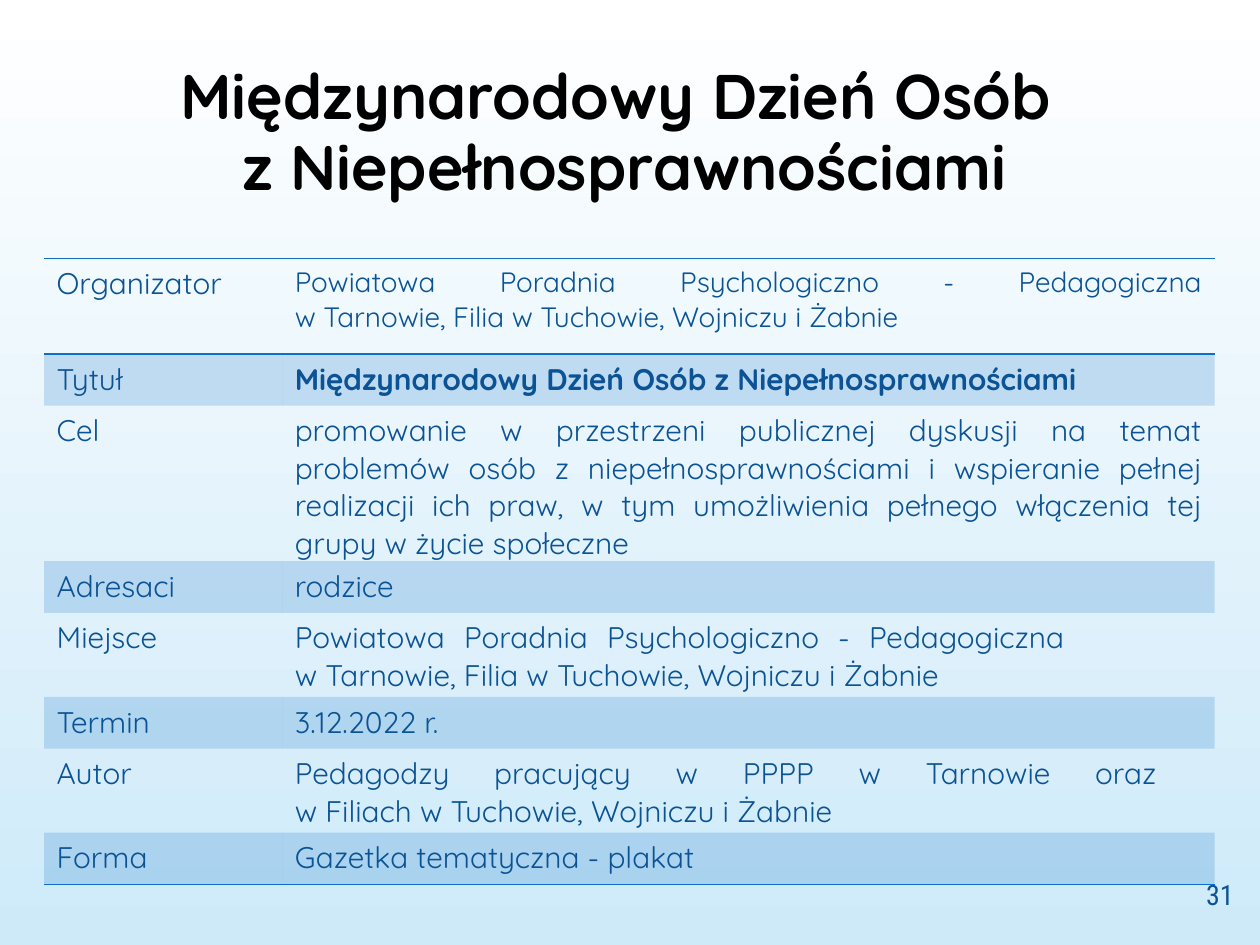
"""Build the event card slide for the International Day of Persons with Disabilities."""
from dataclasses import dataclass

from lxml import etree
from pptx import Presentation, util as u
from pptx.dml.color import RGBColor
from pptx.enum import text as t
from pptx.oxml.ns import qn


@dataclass(frozen=True)
class Theme:
    heading: str = "000000"
    body: str = "0B5394"
    accent: str = "0F6FC6"
    sky_top: str = "FFFFFF"
    sky_bottom: str = "CEEAF9"
    band_alpha: int = 20
    rule_pt: int = 1
    font: str = "Quicksand"
    number_font: str = "Roboto Condensed"
    title_pt: int = 36
    body_pt: int = 17
    small_pt: int = 16
    plain_table: str = "{2D5ABB26-0587-4C30-8999-92F81FD0307C}"


@dataclass(frozen=True)
class Entry:
    label: str
    detail: str
    size: int = 17
    bold: bool = False
    right_margin: float = 0.1
    height: float = 0.41
    rules: tuple[str, ...] = ()


THEME = Theme()
COLUMNS = (1.89, 7.4)
ENTRIES = (
    Entry("Organizator",
          "Powiatowa Poradnia Psychologiczno - Pedagogiczna\n"
          "w Tarnowie, Filia w Tuchowie, Wojniczu i Żabnie",
          size=THEME.small_pt, height=0.76, rules=("lnT", "lnB")),
    Entry("Tytuł", "Międzynarodowy Dzień Osób z Niepełnosprawnościami", bold=True),
    Entry("Cel",
          "promowanie w przestrzeni publicznej dyskusji na temat problemów osób "
          "z niepełnosprawnościami i wspieranie pełnej realizacji ich praw, w tym "
          "umożliwienia pełnego włączenia tej grupy w życie społeczne"),
    Entry("Adresaci", "rodzice"),
    Entry("Miejsce",
          "Powiatowa Poradnia Psychologiczno - Pedagogiczna\n"
          "w Tarnowie, Filia w Tuchowie, Wojniczu i Żabnie", right_margin=1.19),
    Entry("Termin", "3.12.2022 r."),
    Entry("Autor",
          "Pedagodzy pracujący w PPPP w Tarnowie oraz\n"
          "w Filiach w Tuchowie, Wojniczu i Żabnie", right_margin=0.46),
    Entry("Forma", "Gazetka tematyczna - plakat", rules=("lnB",)),
)


def write(frame, wording: str, size: int, align, color: str = THEME.body,
          font: str = THEME.font, bold: bool = False, spacing: float = 1.0) -> None:
    """Fill a text frame with one paragraph, one run per line."""
    frame.word_wrap = True
    paragraph = frame.paragraphs[0]
    paragraph.alignment = align
    paragraph.line_spacing = spacing
    for index, line in enumerate(wording.split("\n")):
        if index:
            paragraph.add_line_break()
        run = paragraph.add_run()
        run.text = line
        run.font.size = u.Pt(size)
        run.font.name = font
        run.font.bold = bold
        run.font.color.rgb = RGBColor.from_string(color)


def add_label(slide, box: tuple[float, ...], wording: str, size: int, align, **style) -> None:
    """Add a vertically centred text box."""
    frame = slide.shapes.add_textbox(*map(u.Inches, box)).text_frame
    frame.vertical_anchor = t.MSO_ANCHOR.MIDDLE
    write(frame, wording, size, align, **style)


def tint(cell) -> None:
    """Give a cell the translucent band colour."""
    cell.fill.solid()
    cell.fill.fore_color.rgb = RGBColor.from_string(THEME.accent)
    for color in cell.fill.fore_color and cell._tc.tcPr.iter(qn("a:srgbClr")):
        etree.SubElement(color, qn("a:alpha"), val=str(THEME.band_alpha * 1000))


def rule(cell, sides: tuple[str, ...]) -> None:
    """Draw accent borders on the given sides of a cell."""
    properties = cell._tc.get_or_add_tcPr()
    for position, side in enumerate(sides):
        line = etree.Element(qn(f"a:{side}"), w=str(u.Pt(THEME.rule_pt)))
        solid = etree.SubElement(line, qn("a:solidFill"))
        etree.SubElement(solid, qn("a:srgbClr"), val=THEME.accent)
        properties.insert(position, line)


def add_event_table(slide, left: float, top: float) -> None:
    """Add the table with one event entry per row."""
    height = sum(entry.height for entry in ENTRIES)
    graphic = slide.shapes.add_table(
        len(ENTRIES), len(COLUMNS), u.Inches(left), u.Inches(top),
        u.Inches(sum(COLUMNS)), u.Inches(height))
    for style in graphic.element.iter(qn("a:tableStyleId")):
        style.text = THEME.plain_table
    table = graphic.table
    table.first_row = table.horz_banding = False
    for column, width in zip(table.columns, COLUMNS):
        column.width = u.Inches(width)
    for index, entry in enumerate(ENTRIES):
        row = table.rows[index]
        row.height = u.Inches(entry.height)
        label, detail = row.cells
        write(label.text_frame, entry.label, THEME.body_pt, t.PP_ALIGN.LEFT)
        write(detail.text_frame, entry.detail, entry.size, t.PP_ALIGN.JUSTIFY, bold=entry.bold)
        detail.margin_right = u.Inches(entry.right_margin)
        for cell in (label, detail):
            if index % 2:
                tint(cell)
            else:
                cell.fill.background()
            rule(cell, entry.rules)


def main() -> None:
    """Compose and save the slide."""
    deck = Presentation()
    deck.slide_width, deck.slide_height = u.Inches(10), u.Inches(7.5)
    slide = deck.slides.add_slide(deck.slide_layouts[6])
    sky = slide.background.fill
    sky.gradient()
    sky.gradient_angle = 270
    for stop, color in zip(sky.gradient_stops, (THEME.sky_top, THEME.sky_bottom)):
        stop.color.rgb = RGBColor.from_string(color)
    add_label(slide, (0.35, 0.36, 9.21, 1.4),
              "Międzynarodowy Dzień Osób \nz Niepełnosprawnościami",
              THEME.title_pt, t.PP_ALIGN.CENTER, color=THEME.heading, bold=True, spacing=0.95)
    add_event_table(slide, 0.35, 2.05)
    add_label(slide, (9.25, 6.9, 0.64, 0.4), "31", THEME.small_pt, t.PP_ALIGN.RIGHT,
              font=THEME.number_font)
    deck.save("out.pptx")


if __name__ == "__main__":
    main()
